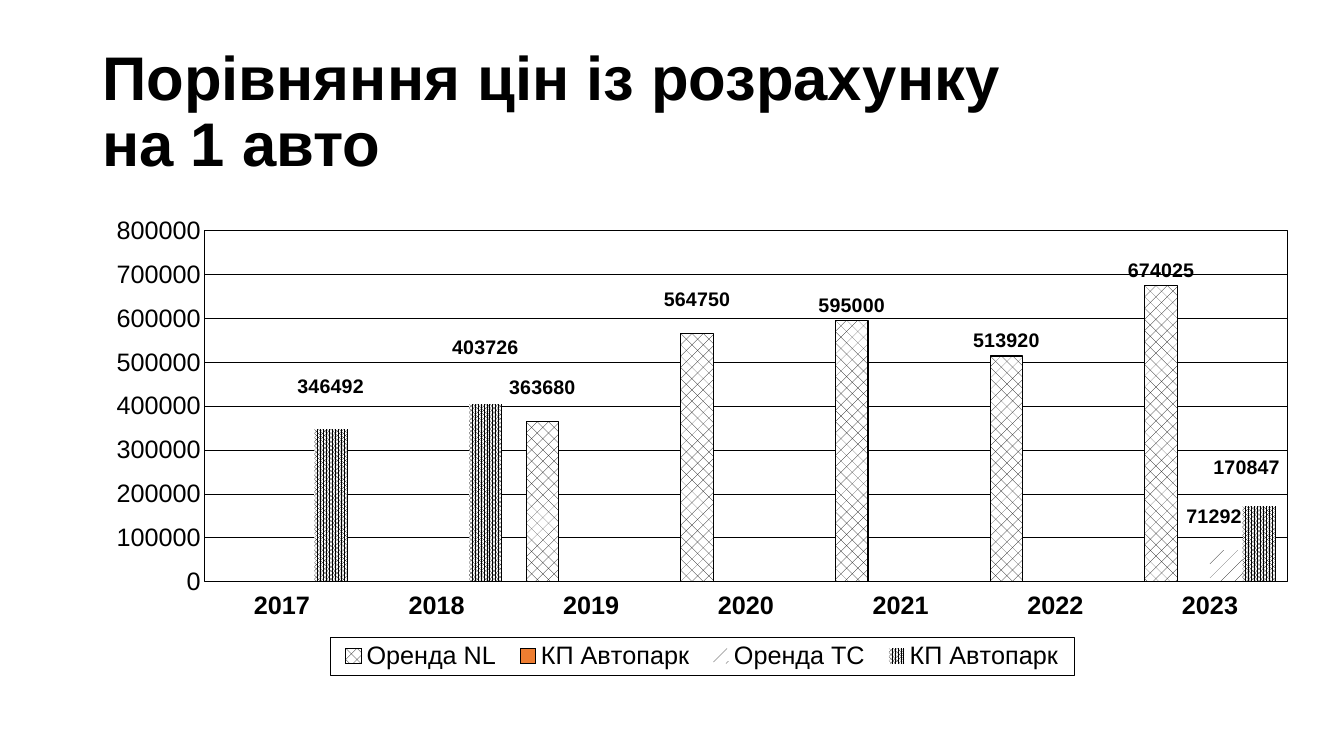
from pptx import Presentation
from pptx.chart.data import CategoryChartData
from pptx.dml.color import RGBColor
from pptx.enum.chart import XL_CHART_TYPE, XL_LABEL_POSITION, XL_LEGEND_POSITION, XL_TICK_LABEL_POSITION, XL_TICK_MARK
from pptx.enum.dml import MSO_PATTERN
from pptx.enum.text import MSO_ANCHOR, MSO_AUTO_SIZE, PP_ALIGN
from pptx.oxml import parse_xml
from pptx.oxml.ns import nsdecls, qn
from pptx.util import Pt

BLACK = RGBColor(0, 0, 0)
WHITE = RGBColor(255, 255, 255)
ORANGE = RGBColor(0xED, 0x7D, 0x31)
FONT = "Arial"
THIN = Pt(0.21)
BAR_LINE = Pt(0.82)

TITLE_LINES = ["Порівняння цін із розрахунку ", "на 1 авто"]
YEARS = [str(year) for year in range(2017, 2024)]
CITY_FLEET = "КП Автопарк"

# Name, prices by year, pattern, outlined, label shifts by year (shares of the chart)
SERIES = [
    ("Оренда NL",
     {"2019": 363680, "2020": 564750, "2021": 595000, "2022": 513920, "2023": 674025},
     MSO_PATTERN.PERCENT_25, True, {"2019": (0, -0.04), "2020": (0, -0.04)}),
    (CITY_FLEET, {}, None, True, {}),
    ("Оренда TC", {"2023": 71292},
     MSO_PATTERN.PERCENT_5, False, {"2023": (-0.01, -0.04)}),
    (CITY_FLEET, {"2017": 346492, "2018": 403726, "2023": 170847},
     MSO_PATTERN.PERCENT_80, False,
     {"2017": (0, -0.06), "2018": (0, -0.09), "2023": (-0.01, -0.05)}),
]


def set_font(font, size, bold):
    font.name, font.size, font.bold = FONT, Pt(size), bold
    font.color.rgb = BLACK


def set_line(line, width):
    line.color.rgb = BLACK
    line.width = width


def place(element, **settings):
    """Give a chart part a manual layout, as its second child or the first of the plot area."""
    for old in element.findall(qn("c:layout")):
        element.remove(old)
    parts = "".join(f'<c:{key} val="{value}"/>' for key, value in settings.items())
    layout = parse_xml(f'<c:layout {nsdecls("c")}><c:manualLayout>{parts}</c:manualLayout></c:layout>')
    element.insert(0 if element.tag == qn("c:plotArea") else 1, layout)


def frame(width):
    return parse_xml(
        f'<c:spPr {nsdecls("c", "a")}><a:noFill/><a:ln w="{width}"><a:solidFill>'
        f'<a:srgbClr val="{BLACK}"/></a:solidFill></a:ln></c:spPr>')


def add_title(page, left, top, width, height):
    title = page.shapes.title
    title.left, title.top, title.width, title.height = left, top, width, height
    text = title.text_frame
    text.word_wrap = True
    text.auto_size = MSO_AUTO_SIZE.NONE
    text.vertical_anchor = MSO_ANCHOR.MIDDLE
    para = text.paragraphs[0]
    para.alignment = PP_ALIGN.LEFT
    para.line_spacing = 0.9
    for index, line in enumerate(TITLE_LINES):
        if index:
            para.add_line_break()
        span = para.add_run()
        span.text = line
        set_font(span.font, 44, True)


def format_axes(chart):
    years, prices = chart.category_axis, chart.value_axis
    for axis, bold in ((years, True), (prices, False)):
        axis.major_tick_mark = axis.minor_tick_mark = XL_TICK_MARK.NONE
        set_font(axis.tick_labels.font, 18, bold)
    years.tick_label_position = XL_TICK_LABEL_POSITION.LOW
    set_line(years.format.line, THIN)
    prices.minimum_scale, prices.maximum_scale, prices.major_unit = 0, 800000, 100000
    prices.format.line.fill.background()
    prices.has_major_gridlines = True
    set_line(prices.major_gridlines.format.line, THIN)


def format_series(series, pattern, outlined, shifts):
    fill = series.format.fill
    if pattern is None:
        fill.solid()
        fill.fore_color.rgb = ORANGE
    else:
        fill.patterned()
        fill.pattern = pattern
        fill.fore_color.rgb, fill.back_color.rgb = BLACK, WHITE
    if outlined:
        set_line(series.format.line, BAR_LINE)
    else:
        series.format.line.fill.background()
    series.invert_if_negative = False
    labels = series.data_labels
    labels.show_value = True
    labels.position = XL_LABEL_POSITION.OUTSIDE_END
    set_font(labels.font, 14, True)
    # Labels moved away from their bars, without leader lines
    for leader in labels._element.findall(qn("c:showLeaderLines")):
        leader.set("val", "0")
    for year, (across, down) in shifts.items():
        index = YEARS.index(year)
        label = series.points[index].data_label
        set_font(label.font, 14, True)
        label.position = XL_LABEL_POSITION.OUTSIDE_END
        element = labels._element.xpath(f"c:dLbl[c:idx/@val={index}]")[0]
        place(element, x=across, y=down)


def add_price_chart(page, left, top, width, height):
    prices = CategoryChartData(number_format="General")
    prices.categories = YEARS
    for name, values, *_ in SERIES:
        prices.add_series(name, [values.get(year) for year in YEARS])
    chart = page.shapes.add_chart(
        XL_CHART_TYPE.COLUMN_CLUSTERED, left, top, width, height, prices).chart
    chart.has_title = False
    set_font(chart.font, 18, True)
    format_axes(chart)

    # Bars and the framed plot area
    plot = chart.plots[0]
    plot.gap_width, plot.overlap, plot.vary_by_categories = 75, 0, False
    for series, (_, _, pattern, outlined, shifts) in zip(plot.series, SERIES):
        format_series(series, pattern, outlined, shifts)
    area = plot._element.getparent()
    place(area, layoutTarget="inner", xMode="edge", yMode="edge", x=0.092, y=0.051, w=0.888, h=0.749)
    area.append(frame(BAR_LINE))

    # Framed legend
    chart.has_legend = True
    legend = chart.legend
    legend.position = XL_LEGEND_POSITION.BOTTOM
    legend.include_in_layout = False
    set_font(legend.font, 18, False)
    place(legend._element, xMode="edge", yMode="edge", x=0.195, y=0.918, w=0.61, h=0.082)
    legend._element.find(qn("c:txPr")).addprevious(frame(THIN))


def main():
    deck = Presentation()
    deck.slide_width, deck.slide_height = Pt(960), Pt(540)
    page = deck.slides.add_slide(deck.slide_layouts.get_by_name("Title Only"))
    page.background.fill.solid()
    page.background.fill.fore_color.rgb = WHITE
    left, width = Pt(66), Pt(871)
    add_title(page, left, Pt(28.75), width, Pt(104.4))
    add_price_chart(page, left, Pt(147.6), width, Pt(334.8))
    deck.save("out.pptx")


if __name__ == "__main__":
    main()
